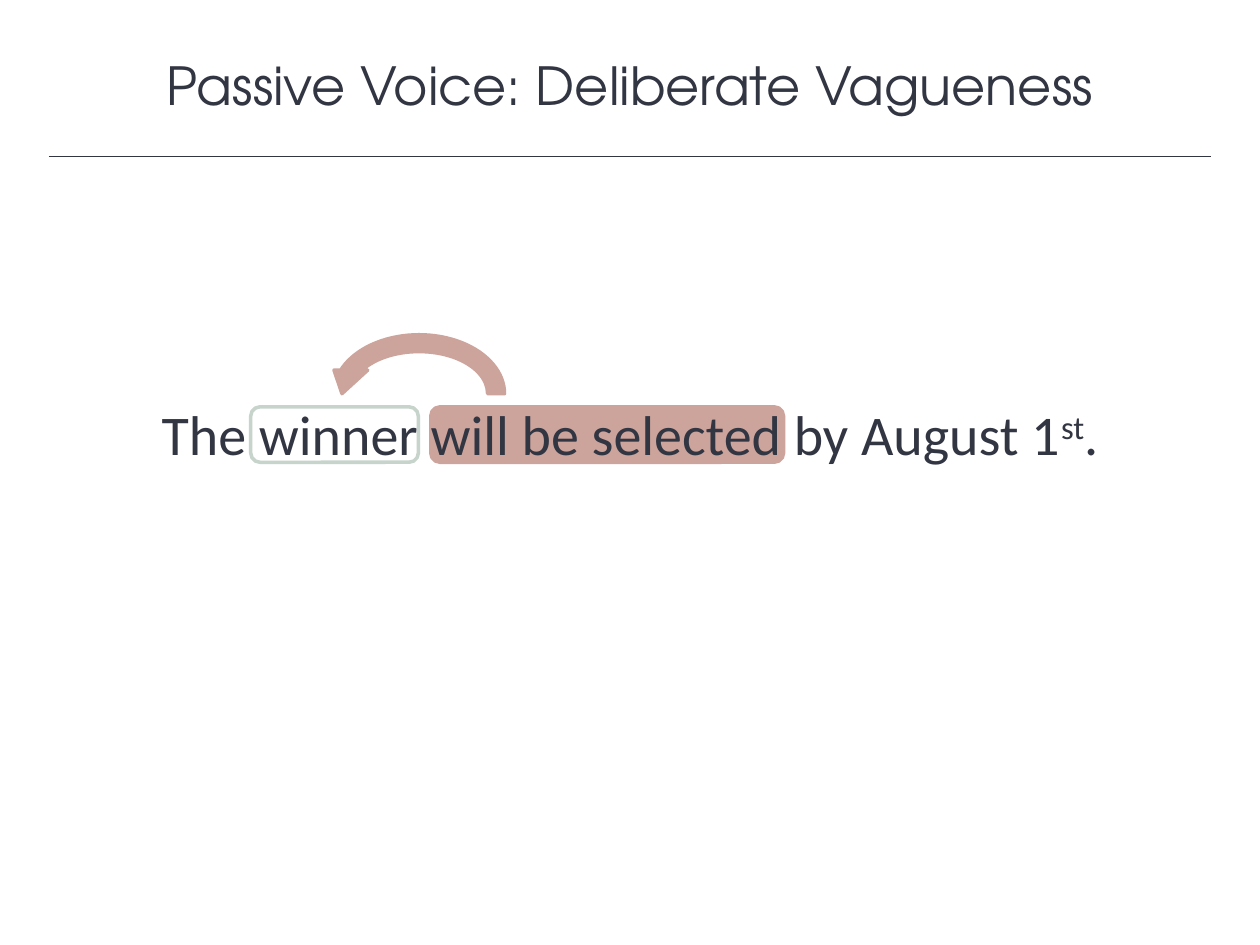
from dataclasses import dataclass

import pptx
import pptx.dml.color
import pptx.enum.shapes
import pptx.enum.text
import pptx.oxml.ns
import pptx.oxml.xmlchemy
import pptx.util

Pt = pptx.util.Pt
RGB = pptx.dml.color.RGBColor
SHAPES = pptx.enum.shapes.MSO_SHAPE


@dataclass(frozen=True)
class Theme:
    ink: RGB = RGB.from_string("323542")
    verb: RGB = RGB.from_string("CCA49C")
    subject: RGB = RGB.from_string("C7D4CB")
    title_font: str = "TeX Gyre Adventor"
    body_font: str = "Calibri"
    title_size: int = 30
    body_size: int = 32
    rule_width: int = 1
    mark_width: int = 2


THEME = Theme()


def place(shape, left, top, width, height):
    shape.left, shape.top = Pt(left), Pt(top)
    shape.width, shape.height = Pt(width), Pt(height)


def style_paragraph(paragraph, font_name, size):
    paragraph.alignment = pptx.enum.text.PP_ALIGN.CENTER
    paragraph.font.name = font_name
    paragraph.font.size = Pt(size)
    paragraph.font.color.rgb = THEME.ink


def add_title(slide, wording):
    title = slide.shapes.title
    place(title, 0, 26.64, 720, 43.92)
    frame = title.text_frame
    frame.text = wording
    frame.vertical_anchor = pptx.enum.text.MSO_ANCHOR.TOP
    frame.auto_size = pptx.enum.text.MSO_AUTO_SIZE.SHAPE_TO_FIT_TEXT
    style_paragraph(frame.paragraphs[0], THEME.title_font, THEME.title_size)


def add_rule(slide, left, right, y):
    rule = slide.shapes.add_connector(
        pptx.enum.shapes.MSO_CONNECTOR.STRAIGHT, Pt(left), Pt(y), Pt(right), Pt(y))
    rule.line.color.rgb = THEME.ink
    rule.line.width = Pt(THEME.rule_width)
    rule._element.spPr.append(pptx.oxml.xmlchemy.OxmlElement("a:effectLst"))


def add_mark(slide, preset, box, color, filled=True):
    mark = slide.shapes.add_shape(preset, *map(Pt, box))
    mark.shadow.inherit = False
    if filled:
        mark.fill.solid()
        mark.fill.fore_color.rgb = color
    else:
        mark.fill.background()
    mark.line.color.rgb = color
    mark.line.width = Pt(THEME.mark_width)
    return mark


def flip_horizontally(shape):
    shape._element.spPr.find(pptx.oxml.ns.qn("a:xfrm")).set("flipH", "1")


def add_sentence(slide, before, ordinal, after):
    sentence = slide.shapes.add_textbox(Pt(52.56), Pt(224.64), Pt(614.88), Pt(46.08))
    frame = sentence.text_frame
    frame.word_wrap = True
    frame.vertical_anchor = pptx.enum.text.MSO_ANCHOR.MIDDLE
    frame.auto_size = pptx.enum.text.MSO_AUTO_SIZE.SHAPE_TO_FIT_TEXT
    paragraph = frame.paragraphs[0]
    style_paragraph(paragraph, THEME.body_font, THEME.body_size)
    paragraph.space_after = Pt(18)
    paragraph.add_run().text = before
    superscript = paragraph.add_run()
    superscript.text = ordinal
    superscript._r.get_or_add_rPr().set("baseline", "30000")
    paragraph.add_run().text = after


def main():
    deck = pptx.Presentation()
    deck.slide_width, deck.slide_height = Pt(720), Pt(540)
    slide = deck.slides.add_slide(deck.slide_layouts.get_by_name("Title Only"))

    add_title(slide, "Passive Voice: Deliberate Vagueness")
    add_rule(slide, 28, 692, 89.5)
    mark_top, mark_height = 232.5, 31.7
    add_mark(slide, SHAPES.ROUNDED_RECTANGLE,
             (246.2, mark_top, 201.6, mark_height), THEME.verb)
    verb_to_subject = add_mark(slide, SHAPES.CIRCULAR_ARROW,
                               (185.8, 186.5, 107.3, 77), THEME.verb)
    flip_horizontally(verb_to_subject)
    add_sentence(slide, "The winner will be selected by August 1", "st", ".")
    add_mark(slide, SHAPES.ROUNDED_RECTANGLE,
             (143.3, mark_top, 95.8, mark_height), THEME.subject, filled=False)

    deck.save("out.pptx")


if __name__ == "__main__":
    main()
